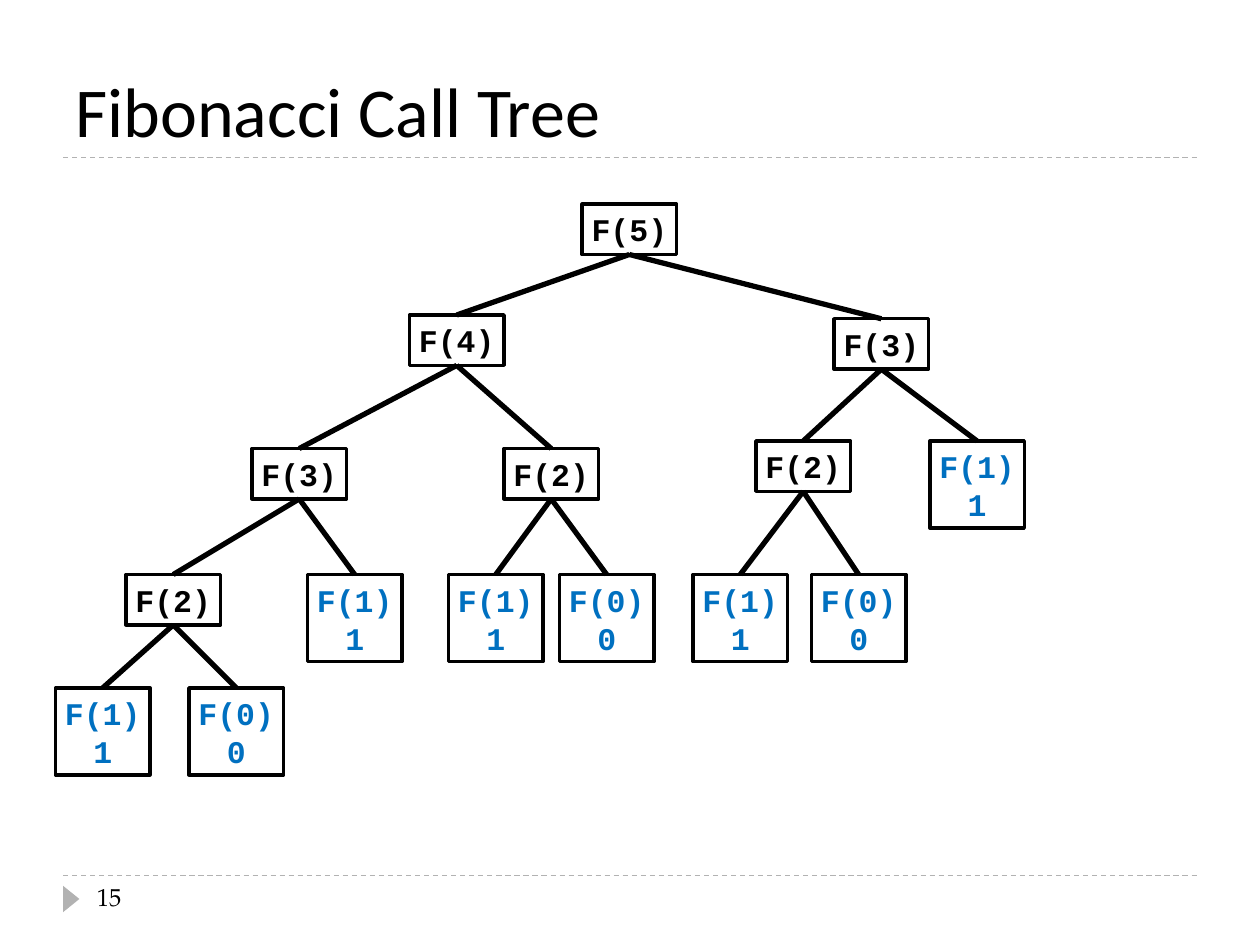
from lxml import etree
from pptx import Presentation
from pptx.dml.color import RGBColor
from pptx.enum import dml, shapes, text
from pptx.oxml.ns import qn
from pptx.util import Inches, Pt

BLACK = RGBColor(0x00, 0x00, 0x00)
BLUE = RGBColor(0x00, 0x70, 0xC0)
GRAY = RGBColor(0xB2, 0xB2, 0xB2)

NODE_WIDTH = 0.75
CALL_HEIGHT = 0.4
LEAF_HEIGHT = 0.69
TOP_SITE, BOTTOM_SITE = 0, 2

TITLE_FONT = {"name": "Calibri", "size": Pt(40)}
NUMBER_FONT = {"name": "TeX Gyre Pagella", "size": Pt(14)}
NODE_FONT = {"name": "Courier New", "size": Pt(18), "bold": True}
NODE_FRAME = {
    "word_wrap": False,
    "auto_size": text.MSO_AUTO_SIZE.NONE,
    "vertical_anchor": text.MSO_ANCHOR.TOP,
}
TITLE_FRAME = {
    "word_wrap": True,
    "auto_size": text.MSO_AUTO_SIZE.NONE,
    "vertical_anchor": text.MSO_ANCHOR.BOTTOM,
}

CALL_TREE = (5, 4.62, 1.62, [
    (4, 3.25, 2.5, [
        (3, 2, 3.56, [
            (2, 1, 4.56, [(1, 0.44, 5.46, []), (0, 1.5, 5.46, [])]),
            (1, 2.44, 4.56, []),
        ]),
        (2, 4, 3.56, [(1, 3.56, 4.56, []), (0, 4.44, 4.56, [])]),
    ]),
    (3, 6.62, 2.53, [
        (2, 6, 3.5, [(1, 5.5, 4.56, []), (0, 6.44, 4.56, [])]),
        (1, 7.38, 3.5, []),
    ]),
])


def set_values(target, values):
    for name, value in values.items():
        setattr(target, name, value)


def write_lines(text_frame, lines, font, color, alignment):
    text_frame.text = "\n".join(lines)
    for paragraph in text_frame.paragraphs:
        paragraph.alignment = alignment
        for run in paragraph.runs:
            set_values(run.font, font)
            run.font.color.rgb = color


def add_title(slide, wording):
    title = slide.shapes.title
    set_values(title, {"left": Inches(0.5), "top": Inches(0.25),
                       "width": Inches(9), "height": Inches(1)})
    set_values(title.text_frame, TITLE_FRAME)
    write_lines(title.text_frame, [wording], TITLE_FONT, BLACK, text.PP_ALIGN.LEFT)


def add_line(slide, start, end, color, width):
    line = slide.shapes.add_connector(
        shapes.MSO_CONNECTOR.STRAIGHT, *map(Inches, start + end))
    line.line.color.rgb = color
    line.line.width = Pt(width)
    etree.SubElement(line._element.spPr, qn("a:effectLst"))
    return line


def add_rule(slide, top):
    rule = add_line(slide, (0.5, top), (9.5, top), GRAY, 0.75)
    rule.line.dash_style = dml.MSO_LINE.DASH


def add_page_marker(slide, number):
    marker = slide.shapes.add_shape(
        shapes.MSO_SHAPE.ISOSCELES_TRIANGLE,
        Inches(0.46), Inches(7.07), Inches(0.21), Inches(0.13))
    marker.rotation = 90
    marker.shadow.inherit = False
    marker.fill.solid()
    marker.fill.fore_color.rgb = GRAY
    marker.line.fill.background()
    box = slide.shapes.add_textbox(
        Inches(0.67), Inches(6.95), Inches(2.17), Inches(0.4))
    box.text_frame.word_wrap = True
    write_lines(box.text_frame, [number], NUMBER_FONT, BLACK, text.PP_ALIGN.LEFT)


def add_node(slide, argument, left, top, is_leaf):
    node = slide.shapes.add_shape(
        shapes.MSO_SHAPE.RECTANGLE, Inches(left), Inches(top),
        Inches(NODE_WIDTH), Inches(LEAF_HEIGHT if is_leaf else CALL_HEIGHT))
    node.shadow.inherit = False
    node.fill.background()
    node.line.color.rgb = BLACK
    node.line.width = Pt(2)
    lines = [f"F({argument})"] + ([str(argument)] if is_leaf else [])
    set_values(node.text_frame, NODE_FRAME)
    write_lines(node.text_frame, lines, NODE_FONT,
                BLUE if is_leaf else BLACK, text.PP_ALIGN.CENTER)
    return node


def add_tree(slide, tree, edges):
    argument, left, top, children = tree
    node = add_node(slide, argument, left, top, not children)
    for child in children:
        edges.append((node, add_tree(slide, child, edges)))
    return node


def add_edge(slide, parent, child):
    edge = add_line(slide, (0, 0), (1, 1), BLACK, 3)
    edge.begin_connect(parent, BOTTOM_SITE)
    edge.end_connect(child, TOP_SITE)


def main():
    presentation = Presentation()
    presentation.slide_width = Inches(10)
    presentation.slide_height = Inches(7.5)
    slide = presentation.slides.add_slide(presentation.slide_layouts[5])
    for top in (6.95, 1.25):
        add_rule(slide, top)
    add_title(slide, "Fibonacci Call Tree")
    add_page_marker(slide, "15")
    edges = []
    add_tree(slide, CALL_TREE, edges)
    for parent, child in edges:
        add_edge(slide, parent, child)
    presentation.save("out.pptx")


if __name__ == "__main__":
    main()
